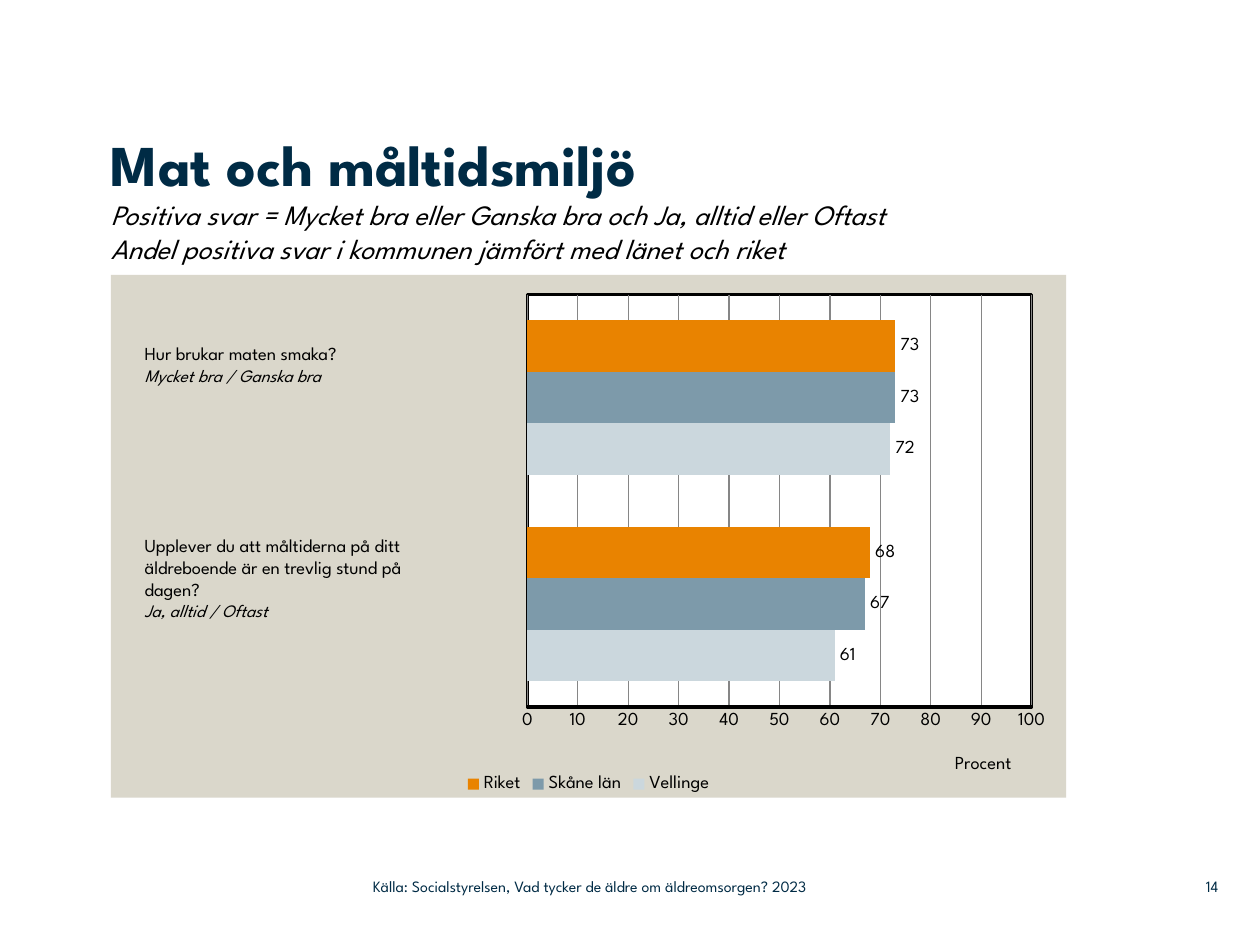
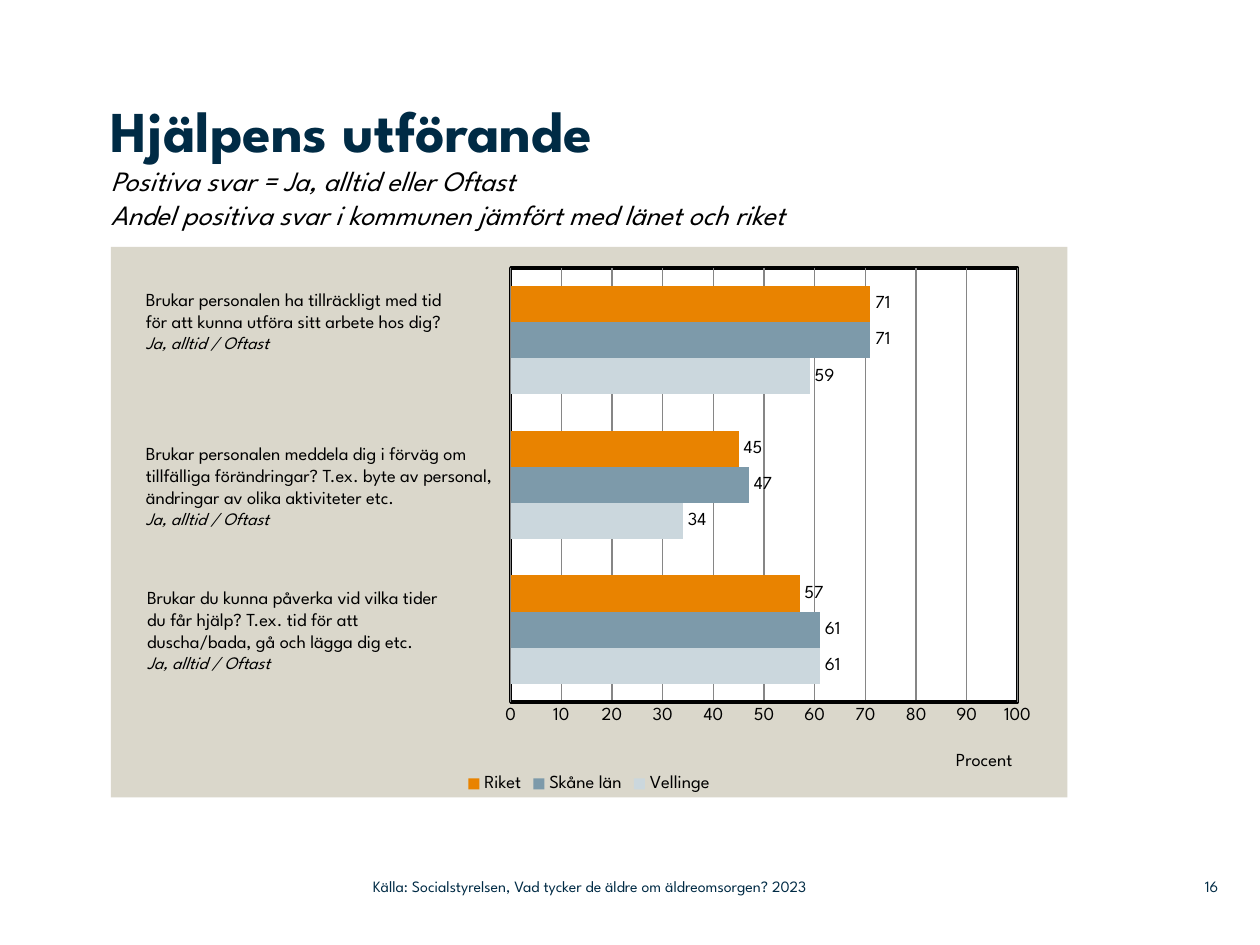
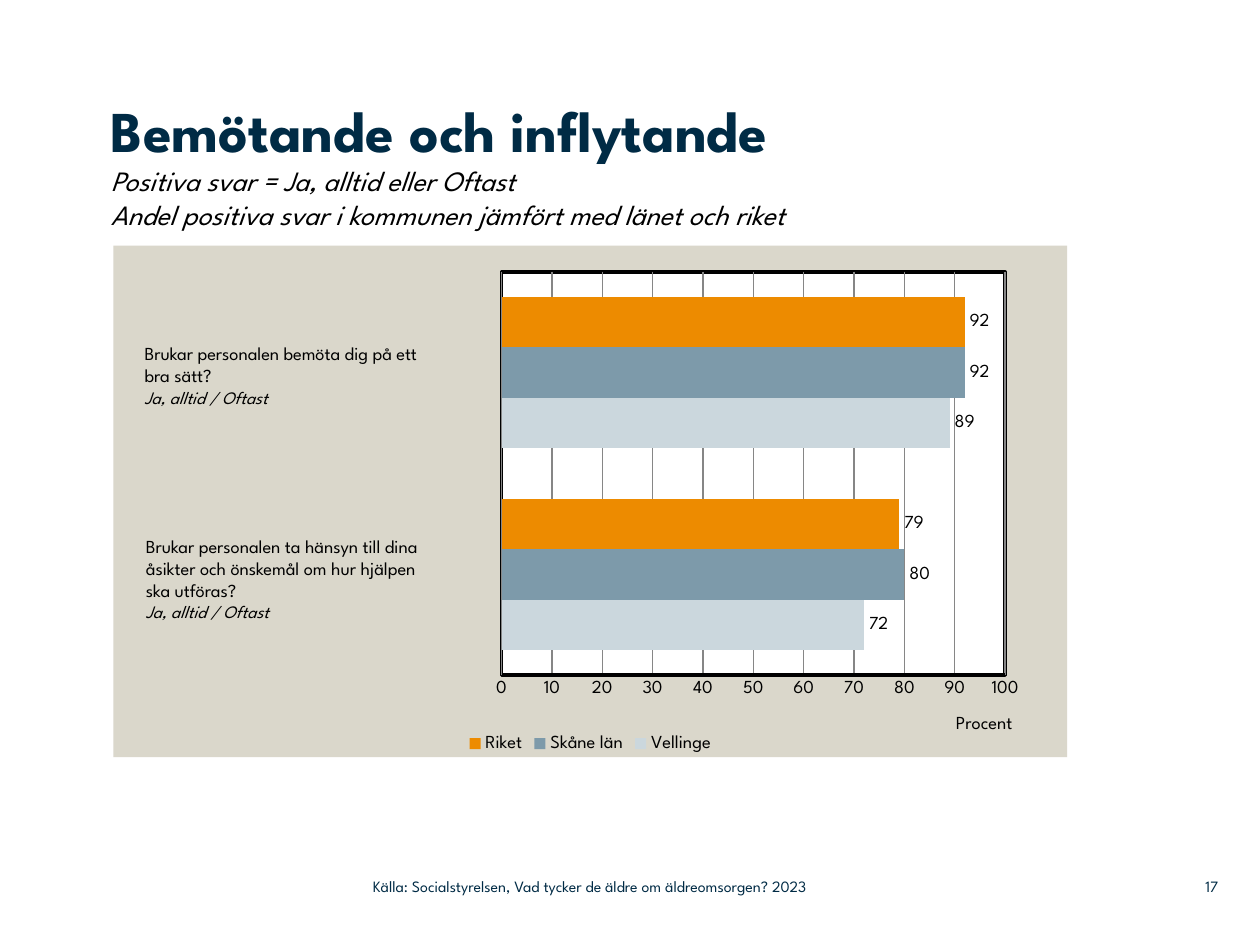
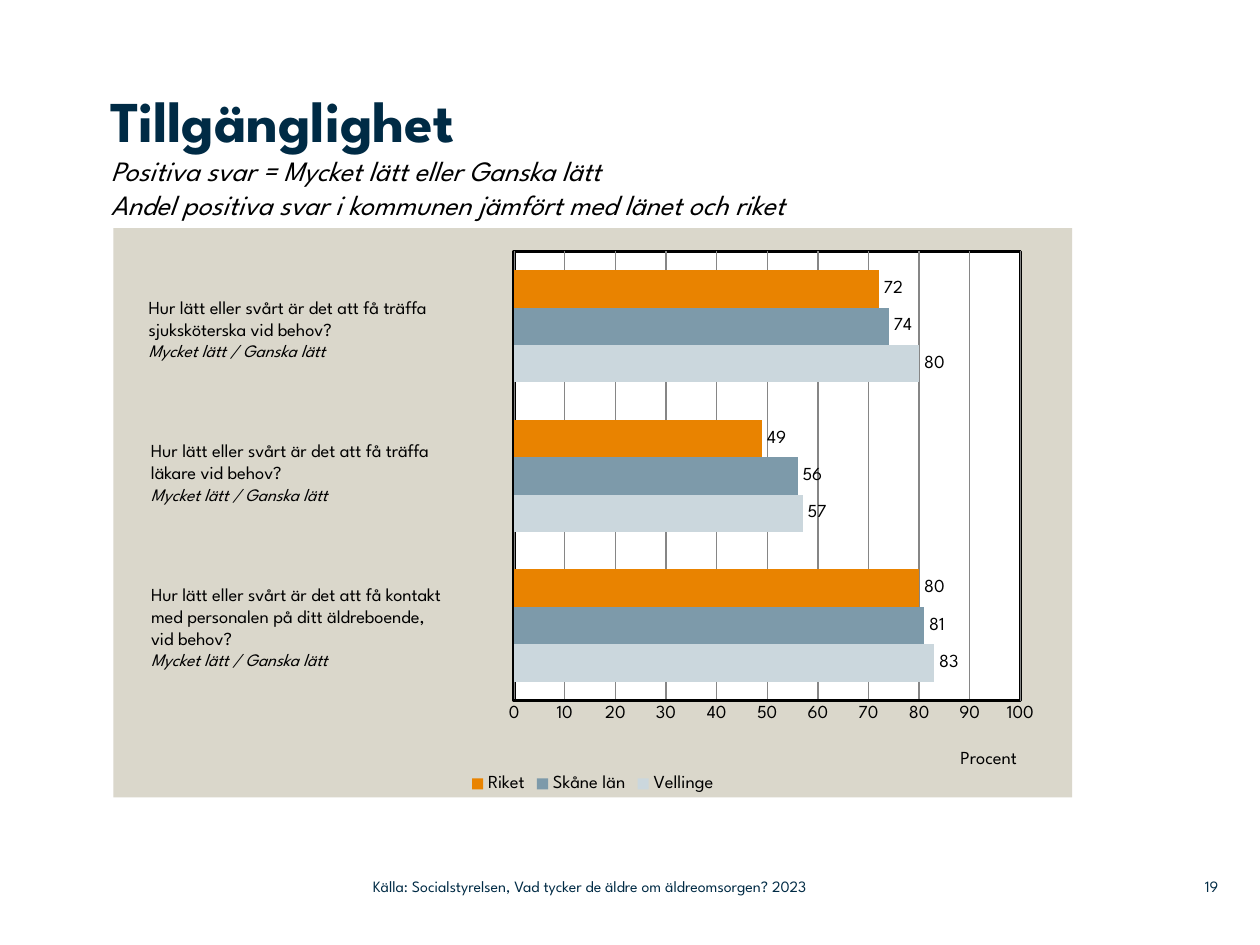
from dataclasses import dataclass

from lxml import etree
from pptx import Presentation
from pptx.chart import data as chart_data
from pptx.dml.color import RGBColor
from pptx.enum import chart as chart_enum, text as text_enum
from pptx.oxml import ns, parse_xml
from pptx.util import Pt

# Shared style
FONT = "League Spartan"
NAVY = RGBColor(0x00, 0x2B, 0x45)
BLACK = RGBColor(0x00, 0x00, 0x00)
GRID_GREY = RGBColor(0x86, 0x86, 0x86)
PANEL_BEIGE = RGBColor(0xDA, 0xD7, 0xCB)
WHITE = RGBColor(0xFF, 0xFF, 0xFF)
PALE_BLUE = RGBColor(0xCB, 0xD7, 0xDD)
STEEL_BLUE = RGBColor(0x7D, 0x9A, 0xAA)
ORANGE = RGBColor(0xE9, 0x83, 0x00)
BRIGHT_ORANGE = RGBColor(0xED, 0x8B, 0x00)

TITLE_LEFT = 63.4
COMPARISON = "Andel positiva svar i kommunen jämfört med länet och riket"
SOURCE = "Källa: Socialstyrelsen, Vad tycker de äldre om äldreomsorgen? 2023"
ALWAYS = "Ja, alltid / Oftast"
EASY = "Mycket lätt / Ganska lätt"


@dataclass
class Question:
    """A label beside the bars; the last line names the positive answers."""
    left: float
    top: float
    width: float
    lines: list


@dataclass
class Survey:
    number: int
    title: str
    positive: str
    title_box: tuple      # top, width, height
    chart_box: tuple      # left, top, width, height
    plot_layout: tuple    # fractions of the chart
    vellinge: list        # values from the bottom group upwards
    skane: list
    riket: list
    questions: list
    riket_color: RGBColor = ORANGE


SURVEYS = [
    Survey(
        14, "Mat och måltidsmiljö", "Mycket bra eller Ganska bra och Ja, alltid eller Oftast",
        (73.4, 606.2, 83.5), (63.4, 157, 545.8, 298.8), (0.436, 0.038, 0.528, 0.789),
        [61, 72], [67, 73], [68, 73],
        [Question(75.6, 192.2, 199.4, ["Hur brukar maten smaka?", "Mycket bra / Ganska bra"]),
         Question(75.6, 301.7, 199.4, [
             "Upplever du att måltiderna på ditt äldreboende är en trevlig stund på",
             "dagen?", ALWAYS])]),
    Survey(
        16, "Hjälpens utförande", "Ja, alltid eller Oftast",
        (54, 560.9, 87.1), (63.4, 141.1, 546.5, 314.6), (0.418, 0.038, 0.53, 0.789),
        [61, 34, 59], [61, 47, 71], [57, 45, 71],
        [Question(76.3, 161.3, 213.8, [
            "Brukar personalen ha tillräckligt med tid",
            "för att kunna utföra sitt arbete hos dig?", ALWAYS]),
         Question(76.3, 249.1, 215.3, [
             "Brukar personalen meddela dig i förväg om tillfälliga förändringar? "
             "T.ex. byte av personal, ändringar av olika aktiviteter etc.", ALWAYS]),
         Question(77, 331.2, 213.8, [
             "Brukar du kunna påverka vid vilka tider", "du får hjälp? T.ex. tid för att",
             "duscha/bada, gå och lägga dig etc.", ALWAYS])]),
    Survey(
        17, "Bemötande och inflytande", "Ja, alltid eller Oftast",
        (54, 564.5, 86.4), (64.8, 140.4, 545, 292.3), (0.407, 0.051, 0.528, 0.789),
        [72, 89], [80, 92], [79, 92],
        [Question(75.6, 192.2, 213.8, [
            "Brukar personalen bemöta dig på ett", "bra sätt?", ALWAYS]),
         Question(76.3, 302.4, 216.7, [
             "Brukar personalen ta hänsyn till dina", "åsikter och önskemål om hur hjälpen",
             "ska utföras?", ALWAYS])],
        BRIGHT_ORANGE),
    Survey(
        19, "Tillgänglighet", "Mycket lätt eller Ganska lätt",
        (48.2, 559.4, 82.1), (64.8, 130.3, 547.9, 325.4), (0.418, 0.041, 0.528, 0.789),
        [83, 57, 80], [81, 56, 74], [80, 49, 72],
        [Question(77.8, 165.6, 215.3, [
            "Hur lätt eller svårt är det att få träffa sjuksköterska vid behov?", EASY]),
         Question(79.2, 247.7, 211, [
             "Hur lätt eller svårt är det att få träffa", "läkare vid behov?", EASY]),
         Question(79.2, 329.8, 216.7, [
             "Hur lätt eller svårt är det att få kontakt", "med personalen på ditt äldreboende,",
             "vid behov?", EASY])]),
]


# Text
def set_font(font, size, color, bold=False, italic=False):
    font.name = FONT
    font.size = Pt(size)
    font.color.rgb = color
    font.bold = bold
    font.italic = italic


def add_text_frame(slide, left, top, width, height, inset=True):
    frame = slide.shapes.add_textbox(Pt(left), Pt(top), Pt(width), Pt(height)).text_frame
    frame.word_wrap = True
    if not inset:
        frame.margin_left = frame.margin_top = frame.margin_right = frame.margin_bottom = 0
    return frame


def add_title(slide, survey):
    top, width, height = survey.title_box
    paragraph = add_text_frame(slide, TITLE_LEFT, top, width, height, inset=False).paragraphs[0]
    heading = paragraph.add_run()
    heading.text = survey.title
    set_font(heading.font, 33, NAVY, bold=True)
    for line in (f"Positiva svar = {survey.positive}", COMPARISON):
        paragraph.add_line_break()
        run = paragraph.add_run()
        run.text = line
        set_font(run.font, 16, BLACK, italic=True)


def add_question(slide, question):
    height = 7.2 + 12.6 * len(question.lines)
    frame = add_text_frame(slide, question.left, question.top, question.width, height)
    frame.text = "\n".join(question.lines)
    *wording, answers = frame.paragraphs
    for paragraph in wording:
        set_font(paragraph.font, 10.5, BLACK)
    set_font(answers.font, 10, BLACK, italic=True)


def add_footer(slide, number):
    for left, width, content, alignment in (
            (662.4, 33.8, str(number), text_enum.PP_ALIGN.RIGHT),
            (213.1, 319, SOURCE, text_enum.PP_ALIGN.LEFT)):
        frame = add_text_frame(slide, left, 496.1, width, 20.9, inset=False)
        frame.vertical_anchor = text_enum.MSO_ANCHOR.MIDDLE
        paragraph = frame.paragraphs[0]
        paragraph.text = content
        paragraph.alignment = alignment
        set_font(paragraph.font, 9, NAVY)


# Chart
def set_layout(element, index, x, y, width=None, height=None):
    """Give a chart part a fixed place, as fractions of the chart."""
    for old in element.findall(ns.qn("c:layout")):
        element.remove(old)
    layout = etree.Element(ns.qn("c:layout"))
    manual = etree.SubElement(layout, ns.qn("c:manualLayout"))
    settings = [("xMode", "edge"), ("yMode", "edge"), ("x", x), ("y", y)]
    if width is not None:
        settings = [("layoutTarget", "inner"), *settings, ("w", width), ("h", height)]
    for tag, value in settings:
        etree.SubElement(manual, ns.qn(f"c:{tag}")).set("val", str(value))
    element.insert(index, layout)


def area_format(fill, line=None):
    outline = "<a:ln><a:noFill/></a:ln>"
    if line is not None:
        outline = (f'<a:ln w="{Pt(2)}"><a:solidFill><a:srgbClr val="{line}"/>'
                   "</a:solidFill></a:ln>")
    return parse_xml(f'<c:spPr {ns.nsdecls("c", "a")}><a:solidFill>'
                     f'<a:srgbClr val="{fill}"/></a:solidFill>{outline}</c:spPr>')


def style_value_axis(axis):
    axis.minimum_scale, axis.maximum_scale, axis.major_unit = 0, 100, 10
    axis.major_tick_mark = axis.minor_tick_mark = chart_enum.XL_TICK_MARK.NONE
    axis.format.line.color.rgb = BLACK
    axis.format.line.width = Pt(2)
    axis.has_major_gridlines = True
    axis.major_gridlines.format.line.color.rgb = GRID_GREY
    axis.major_gridlines.format.line.width = Pt(0.75)
    title = axis.axis_title
    title.text_frame.text = "Procent"
    set_font(title.text_frame.paragraphs[0].font, 10.5, BLACK)
    set_layout(title._element, 1, 0.88, 0.91)


def add_bar_chart(slide, survey):
    series_list = (("Vellinge", survey.vellinge, PALE_BLUE),
                   ("Skåne län", survey.skane, STEEL_BLUE),
                   ("Riket", survey.riket, survey.riket_color))
    data = chart_data.CategoryChartData()
    data.categories = [str(i + 1) for i in range(len(survey.riket))]
    for name, values, _ in series_list:
        data.add_series(name, values)
    chart = slide.shapes.add_chart(
        chart_enum.XL_CHART_TYPE.BAR_CLUSTERED, *map(Pt, survey.chart_box), data).chart
    set_font(chart.font, 10.5, BLACK)
    chart.has_title = False
    chart.has_legend = True
    chart.legend.position = chart_enum.XL_LEGEND_POSITION.BOTTOM
    chart.legend.include_in_layout = False
    chart.category_axis.visible = False
    style_value_axis(chart.value_axis)

    plot = chart.plots[0]
    plot.gap_width = 100
    plot.vary_by_categories = False
    plot.has_data_labels = True
    labels = plot.data_labels
    labels.show_value = True
    labels.position = chart_enum.XL_LABEL_POSITION.OUTSIDE_END
    set_font(labels.font, 10.5, BLACK)
    for series, (_, _, color) in zip(plot.series, series_list):
        series.format.fill.solid()
        series.format.fill.fore_color.rgb = color

    # Beige panel with a framed white plot
    chart_element = chart._chartSpace.chart
    set_layout(chart_element.plotArea, 0, *survey.plot_layout)
    chart_element.plotArea.append(area_format(WHITE, BLACK))
    chart_element.addnext(area_format(PANEL_BEIGE))


def main():
    presentation = Presentation()
    presentation.slide_width, presentation.slide_height = Pt(720), Pt(540)
    for survey in SURVEYS:
        slide = presentation.slides.add_slide(presentation.slide_layouts[6])
        add_bar_chart(slide, survey)
        add_title(slide, survey)
        for question in survey.questions:
            add_question(slide, question)
        add_footer(slide, survey.number)
    presentation.save("out.pptx")


if __name__ == "__main__":
    main()
